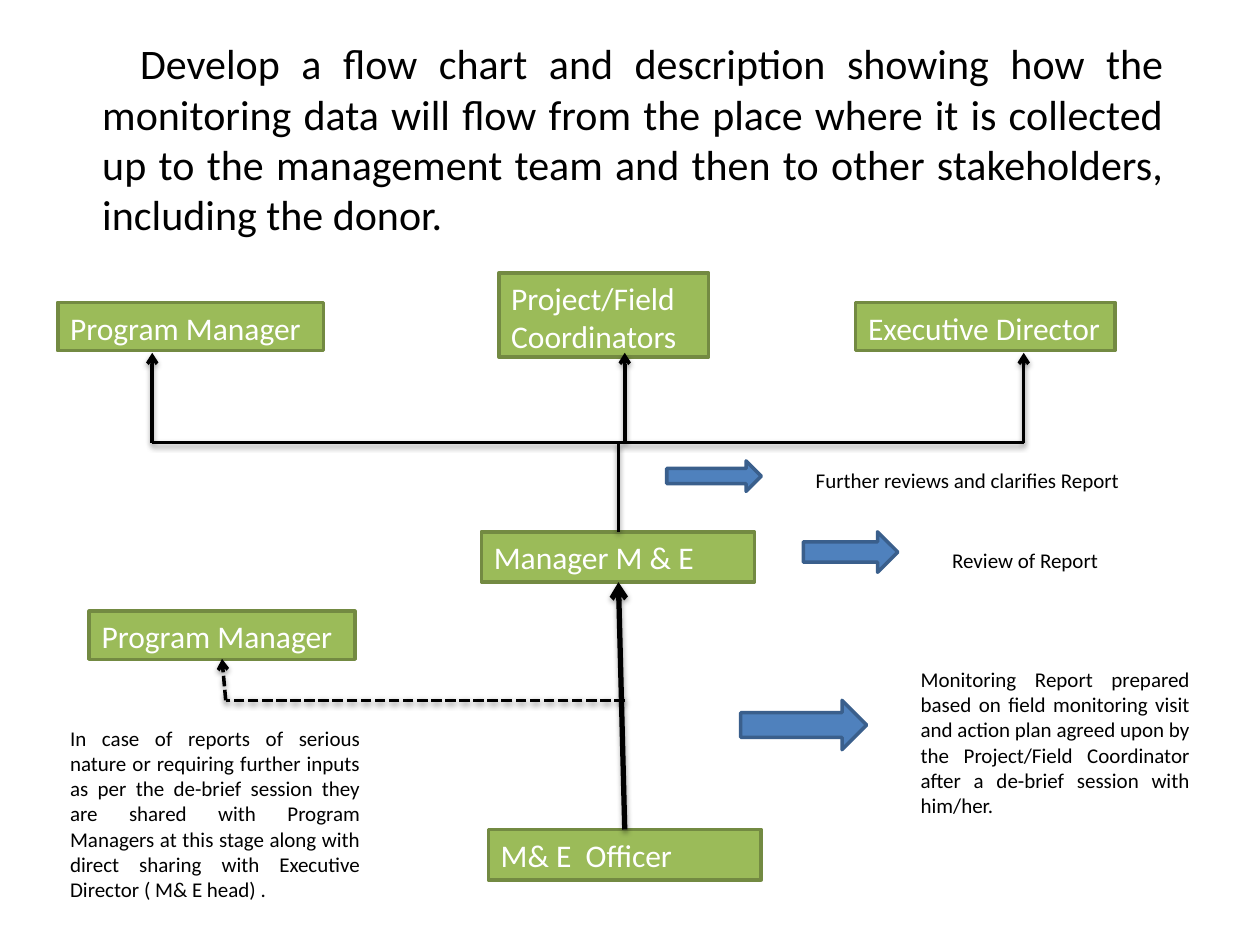
from dataclasses import dataclass

from lxml import etree
from pptx import Presentation
from pptx.dml.color import RGBColor
from pptx.enum.dml import MSO_LINE
from pptx.enum.shapes import MSO_CONNECTOR as Connector, MSO_SHAPE as Shape
from pptx.enum.text import MSO_ANCHOR as Anchor, PP_ALIGN as Align
from pptx.oxml import parse_xml
from pptx.oxml.ns import nsdecls, qn
from pptx.util import Inches, Pt

CELL = Inches(10) / 24  # the slide is a grid of 24 columns by 18 rows


@dataclass(frozen=True)
class Theme:
    font: str = "Calibri"
    ink: str = "000000"
    paper: str = "FFFFFF"
    box_fill: str = "9BBB59"
    box_edge: str = "738A42"
    arrow_fill: str = "4F81BD"
    arrow_edge: str = "3A5F8C"
    title_size: int = 24
    box_size: int = 18
    note_size: int = 12
    line_width: int = 2


def cells(*counts):
    return [round(count * CELL) for count in counts]


def set_all(target, values):
    for name, value in values.items():
        setattr(target, name, value)


class FlowSlide:
    def __init__(self, deck, theme):
        self.theme = theme
        self.shapes = deck.slides.add_slide(deck.slide_layouts[6]).shapes

    def fill_text(self, shape, text, size, color, align=Align.LEFT):
        frame = shape.text_frame
        set_all(frame, {"word_wrap": True, "vertical_anchor": Anchor.TOP})
        para = frame.paragraphs[0]
        para.alignment = align
        span = para.add_run()
        span.text = text
        set_all(span.font, {"name": self.theme.font, "size": Pt(size)})
        span.font.color.rgb = RGBColor.from_string(color)
        return para

    def text(self, place, text, size, align=Align.LEFT):
        box = self.shapes.add_textbox(*cells(*place))
        return self.fill_text(box, text, size, self.theme.ink, align)

    def title(self, place, text):
        para = self.text(place, text, self.theme.title_size, Align.JUSTIFY)
        para.space_before = Pt(4.8)
        properties = para._p.get_or_add_pPr()
        properties.set("marL", str(Inches(0.38)))
        properties.set("indent", str(Inches(0.3)))

    def note(self, place, text, align=Align.LEFT):
        self.text(place, text, self.theme.note_size, align)

    def preset(self, kind, place, fill, edge):
        shape = self.shapes.add_shape(kind, *cells(*place))
        shape.shadow.inherit = False
        shape.fill.solid()
        shape.fill.fore_color.rgb = RGBColor.from_string(fill)
        shape.line.color.rgb = RGBColor.from_string(edge)
        shape.line.width = Pt(self.theme.line_width)
        return shape

    def role(self, place, name):
        theme = self.theme
        box = self.preset(Shape.RECTANGLE, place, theme.box_fill, theme.box_edge)
        self.fill_text(box, name, theme.box_size, theme.paper)

    def pointer(self, place):
        theme = self.theme
        self.preset(Shape.RIGHT_ARROW, place, theme.arrow_fill, theme.arrow_edge)

    def flow(self, start, end, head=False, dashed=False, width=None):
        """Draw a shadowed line, with an arrowhead at its end if head is set."""
        link = self.shapes.add_connector(Connector.STRAIGHT, *cells(*start, *end))
        link.line.color.rgb = RGBColor.from_string(self.theme.ink)
        link.line.width = Pt(width or self.theme.line_width)
        if dashed:
            link.line.dash_style = MSO_LINE.SQUARE_DOT
        if head:
            outline = link.line._get_or_add_ln()
            etree.SubElement(outline, qn("a:tailEnd"), type="arrow")
        link._element.spPr.append(parse_xml(
            f'<a:effectLst {nsdecls("a")}>'
            '<a:outerShdw blurRad="40000" dist="20000" dir="5400000" rotWithShape="0">'
            f'<a:srgbClr val="{self.theme.ink}"><a:alpha val="38000"/></a:srgbClr>'
            '</a:outerShdw></a:effectLst>'))


def main():
    deck = Presentation()
    set_all(deck, {"slide_width": Inches(10), "slide_height": Inches(7.5)})
    slide = FlowSlide(deck, Theme())

    slide.title((0.8, 0.6, 21.6, 7.6),
                "Develop a flow chart and description showing how the monitoring data "
                "will flow from the place where it is collected up to the management "
                "team and then to other stakeholders, including the donor.")

    for place, name in (
        ((9.3, 15.8, 5.2, 0.96), "M& E  Officer"),
        ((1.7, 11.64, 5.06, 0.92), "Program Manager"),
        ((9.17, 10.13, 5.2, 0.96), "Manager M & E"),
        ((1.1, 5.76, 5.06, 0.92), "Program Manager"),
        ((9.5, 5.2, 4, 1.6), "Project/Field Coordinators"),
        ((16.3, 5.76, 4.94, 0.92), "Executive Director"),
    ):
        slide.role(place, name)

    for place in ((14.11, 13.34, 2.4, 0.94), (15.3, 10.13, 1.8, 0.77),
                  (12.7, 8.78, 1.8, 0.58)):
        slide.pointer(place)

    # Officer to manager, with a dashed branch to the program manager
    officer_x, manager_x, branch_x, branch_y = 11.9, 11.78, 4.3, 13.34
    slide.flow((officer_x, 15.8), (manager_x, 11.09), head=True, width=3)
    slide.flow((officer_x, branch_y), (branch_x, branch_y), dashed=True)
    slide.flow((branch_x, branch_y), (4.23, 12.55), head=True, dashed=True)

    # Manager up to a shared bar, then to the three roles at the top
    bar_y, top_y, left_x, right_x = 8.43, 6.72, 2.9, 19.5
    slide.flow((manager_x, 10.13), (manager_x, bar_y))
    slide.flow((left_x, bar_y), (right_x, bar_y))
    for x in (left_x, officer_x, right_x):
        slide.flow((x, bar_y), (x, top_y), head=True)

    slide.note((1.1, 13.7, 6, 3.43),
               "In case of reports of serious nature or requiring further inputs as per "
               "the de-brief session they are shared with Program Managers at this stage "
               "along with direct sharing with Executive Director ( M& E head) .",
               Align.JUSTIFY)
    slide.note((17.3, 12.58, 5.6, 2.98),
               "Monitoring Report prepared based on field monitoring visit and action "
               "plan agreed upon by the Project/Field Coordinator after a de-brief "
               "session with him/her.", Align.JUSTIFY)
    slide.note((17.9, 10.32, 3.35, 0.7), "Review of Report")
    slide.note((15.3, 8.78, 6.4, 0.7), "Further reviews and clarifies Report")

    deck.save("out.pptx")


if __name__ == "__main__":
    main()
